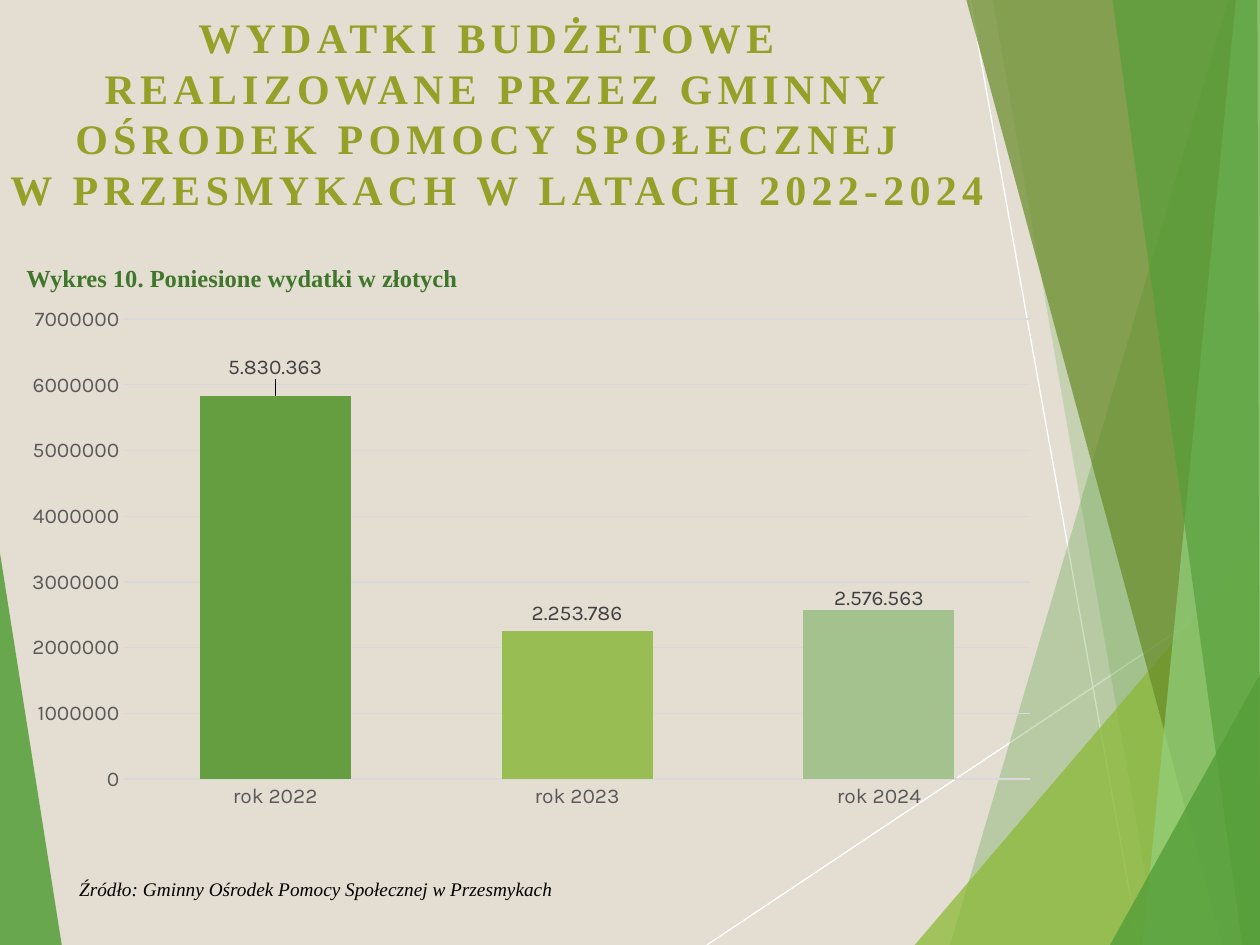
from lxml.etree import SubElement
from pptx import Presentation
from pptx.chart.data import CategoryChartData
from pptx.dml.color import RGBColor
from pptx.enum.chart import XL_CHART_TYPE as Kind, XL_LABEL_POSITION as Spot
from pptx.enum.chart import XL_TICK_MARK as Tick
from pptx.enum.shapes import MSO_CONNECTOR as Conn
from pptx.enum.text import MSO_ANCHOR as Anchor, MSO_AUTO_SIZE as Fit, PP_ALIGN as Align
from pptx.oxml import parse_xml
from pptx.oxml.ns import nsdecls, qn
from pptx.util import Inches, Pt

W, H = 10, 7.5
SERIF, SANS = "Times New Roman", "Karla"
HEX = {
    "paper": "E3DED1", "white": "FFFFFF", "black": "000000",
    "leaf": "549E39", "lime": "8AB833", "moss": "678A26", "mint": "93D07D",
    "title": "94A027", "head": "3F762B",
    "axis": "595959", "grid": "D9D9D9", "label": "404040", "bar": "B7CBA3",
}
# Corner points in inches, colour, opacity in percent
FACETS = [
    ([(0, 4.39), (0.49, H), (0, H)], "leaf", 85),
    ([(9.75, 0), (7.54, H), (W, H), (W, 0)], "leaf", 30),
    ([(7.88, 0), (9.19, H), (W, H), (W, 0)], "leaf", 20),
    ([(7.26, H), (W, 4.29), (W, H)], "lime", 72),
    ([(7.67, 0), (9.7, H), (W, H), (W, 0)], "moss", 70),
    ([(9.81, 0), (9.07, H), (W, H), (W, 0)], "mint", 70),
    ([(8.83, 0), (9.86, H), (W, H), (9.98, 0)], "leaf", 65),
    ([(8.81, H), (W, 5.35), (W, H)], "leaf", 80),
]
RAYS = [(5.61, H, W, 4.57), (7.7, 0, 9.04, H)]
# Year, amount, label, bar colour, label shift as a share of chart height
COSTS = [
    ("rok 2022", 5830363, "5.830.363", "659E40", -0.02),
    ("rok 2023", 2253786, "2.253.786", "98BE53", 0),
    ("rok 2024", 2576563, "2.576.563", "A3C28D", 0.01),
]


def rgb(name):
    return RGBColor.from_string(HEX.get(name, name))


def style(font, size, color, face, bold=False, slant=False):
    font.size, font.name = Pt(size), face
    font.bold, font.italic = bold, slant
    font.color.rgb = rgb(color)


def place(shape, x, y, w, h):
    shape.left, shape.top = Inches(x), Inches(y)
    shape.width, shape.height = Inches(w), Inches(h)


def write(shape, text, size, color, align=Align.LEFT, gap=None, lead=None, **fmt):
    """Fill a shape with one paragraph; gap is letter spacing, lead line pitch."""
    frame = shape.text_frame
    frame.word_wrap, frame.auto_size = True, Fit.NONE
    frame.vertical_anchor = Anchor.TOP
    frame.text = text
    para = frame.paragraphs[0]
    para.alignment, para.space_before = align, Pt(0)
    if lead:
        para.line_spacing = Pt(lead)
    for run in para.runs:
        style(run.font, size, color, SERIF, **fmt)
        if gap:
            run.font._element.set("spc", str(gap * 100))
    return para


def facet(slide, points, color, alpha):
    spots = [(x * 100, y * 100) for x, y in points]
    pen = slide.shapes.build_freeform(*spots[0], scale=Inches(1) / 100)
    pen.add_line_segments(spots[1:], close=True)
    shape = pen.convert_to_shape()
    shape.shadow.inherit = False
    shape.line.fill.background()
    shape.fill.solid()
    shape.fill.fore_color.rgb = rgb(color)
    tint = shape._element.spPr.find(".//" + qn("a:srgbClr"))
    SubElement(tint, qn("a:alpha"), val=str(alpha * 1000))


def ray(slide, *ends):
    line = slide.shapes.add_connector(Conn.STRAIGHT, *map(Inches, ends))
    line.line.color.rgb, line.line.width = rgb("white"), Pt(0.75)
    SubElement(line._element.spPr, qn("a:effectLst"))


def layout(body):
    return parse_xml(f"<c:layout {nsdecls('c')}><c:manualLayout>{body}"
                     "</c:manualLayout></c:layout>")


def tune(chart):
    """Format both axes and fix the inner plot area."""
    cat, val = chart.category_axis, chart.value_axis
    for axis in (cat, val):
        axis.major_tick_mark = axis.minor_tick_mark = Tick.NONE
        style(axis.tick_labels.font, 12, "axis", SANS)
    cat.format.line.color.rgb, cat.format.line.width = rgb("grid"), Pt(1)
    val.format.line.fill.background()
    val.minimum_scale, val.maximum_scale, val.major_unit = 0, 7000000, 1000000
    val.tick_labels.number_format = "General"
    val.tick_labels.number_format_is_linked = False
    grid = val.major_gridlines.format.line
    grid.color.rgb, grid.width = rgb("grid"), Pt(0.75)
    area = chart._chartSpace.find(".//" + qn("c:plotArea"))
    for old in area.findall(qn("c:layout")):
        area.remove(old)
    body = '<c:layoutTarget val="inner"/><c:xMode val="edge"/><c:yMode val="edge"/>'
    for key, share in zip("xywh", (0.11, 0.108, 0.882, 0.801)):
        body += f'<c:{key} val="{share}"/>'
    area.insert(0, layout(body))


def bars(slide):
    data = CategoryChartData()
    data.categories = [cost[0] for cost in COSTS]
    data.add_series("Series 1", [cost[1] for cost in COSTS])
    box = map(Inches, (0.09, 2.04, 8.15, 4.56))
    chart = slide.shapes.add_chart(Kind.COLUMN_CLUSTERED, *box, data).chart
    chart.has_legend = chart.has_title = False
    style(chart.font, 10, "black", SANS)
    tune(chart)
    plot = chart.plots[0]
    plot.vary_by_categories, plot.gap_width, plot.overlap = False, 100, -24
    row = plot.series[0]
    row.format.fill.solid()
    row.format.fill.fore_color.rgb = rgb("bar")
    labels = row.data_labels
    labels.show_value, labels.position = True, Spot.OUTSIDE_END
    style(labels.font, 12, "label", SANS)
    for i, (_, _, text, color, shift) in enumerate(COSTS):
        fill = row.points[i].format.fill
        fill.solid()
        fill.fore_color.rgb = rgb(color)
        label = row.points[i].data_label
        label.text_frame.text = text
        style(label.text_frame.paragraphs[0].runs[0].font, 12, "label", SANS)
        label.position = Spot.OUTSIDE_END
        if shift:
            node = labels._element.findall(qn("c:dLbl"))[i]
            for old in node.findall(qn("c:layout")):
                node.remove(old)
            node.insert(1, layout(f'<c:x val="0"/><c:y val="{shift}"/>'))


def main():
    deck = Presentation()
    deck.slide_width, deck.slide_height = Inches(W), Inches(H)
    slide = deck.slides.add_slide(deck.slide_layouts[1])
    slide.background.fill.solid()
    slide.background.fill.fore_color.rgb = rgb("paper")
    title, body = slide.placeholders
    for ends in RAYS:
        ray(slide, *ends)
    for item in FACETS:
        facet(slide, *item)
    for holder in (title, body):  # bring the text in front of the facets
        slide.shapes._spTree.append(holder._element)

    place(title, -0.13, 0.04, 8.15, 0.92)
    write(title, "WYDATKI BUDŻETOWE \vREALIZOWANE PRZEZ GMINNY OŚRODEK POMOCY "
          "SPOŁECZNEJ \vW PRZESMYKACH W LATACH 2022-2024", 24, "title",
          align=Align.CENTER, gap=3, lead=28.9, bold=True)
    place(body, 0.11, 2.04, 9.47, 0.49)
    head = write(body, "Wykres 10. Poniesione wydatki w złotych", 14, "head", bold=True)
    props = head._p.get_or_add_pPr()
    props.set("marL", "0")
    props.set("indent", "0")
    SubElement(props, qn("a:buNone"))
    bars(slide)
    note = slide.shapes.add_textbox(*map(Inches, (0.53, 6.91, 5, 0.29)))
    write(note, "Źródło: Gminny Ośrodek Pomocy Społecznej w Przesmykach",
          11, "black", slant=True)
    deck.save("out.pptx")


if __name__ == "__main__":
    main()
